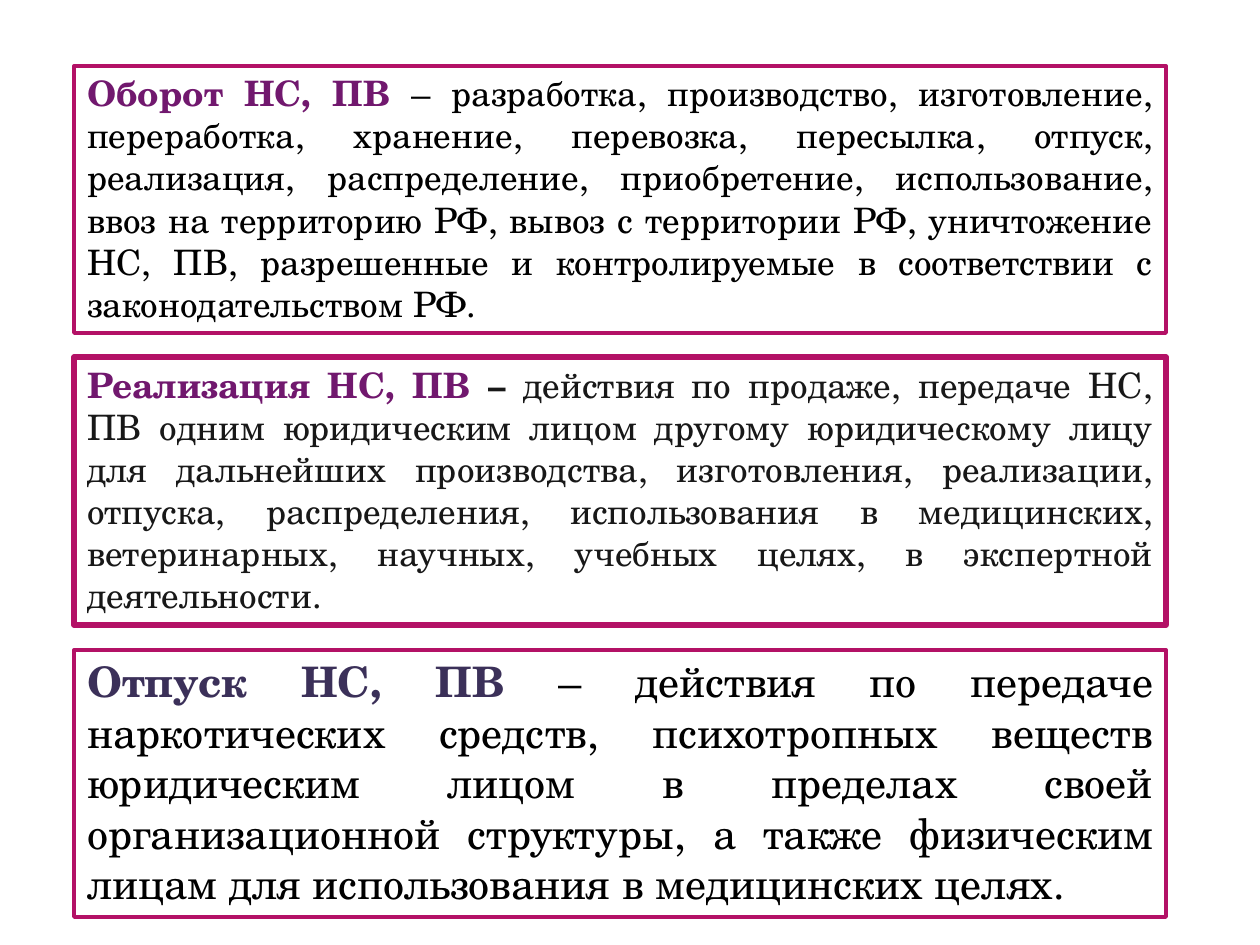
import pptx
import pptx.util
import pptx.dml.color
import pptx.enum.shapes
import pptx.enum.text

EMU_PER_PX = 914400 / 126
FONT = "TeX Gyre Schola"
COLORS = {
    "border": "B31166",
    "purple": "71186E",
    "indigo": "3B3059",
    "charcoal": "181818",
    "black": "000000",
}


def px(length):
    return pptx.util.Emu(round(length * EMU_PER_PX))


def color(name):
    return pptx.dml.color.RGBColor.from_string(COLORS[name])


def add_text(paragraph, text, size=20, fill="black", bold=False):
    run = paragraph.add_run()
    run.text = text
    run.font.name = FONT
    run.font.size = pptx.util.Pt(size)
    run.font.bold = bold
    run.font.color.rgb = color(fill)


class SlideBuilder:
    """Holds the box style and the current slide."""

    left, width = 74, 1092
    margin_x, margin_y = 13, 6

    def __init__(self, presentation):
        self.slide = presentation.slides.add_slide(presentation.slide_layouts[6])

    def definition_box(self, top, height, runs, size=20, border=2.25):
        shape = self.slide.shapes.add_shape(
            pptx.enum.shapes.MSO_SHAPE.RECTANGLE,
            px(self.left), px(top), px(self.width), px(height))
        shape.shadow.inherit = False
        shape.fill.background()
        shape.line.color.rgb = color("border")
        shape.line.width = pptx.util.Pt(border)

        frame = shape.text_frame
        frame.word_wrap = True
        frame.vertical_anchor = pptx.enum.text.MSO_ANCHOR.TOP
        frame.margin_left = frame.margin_right = px(self.margin_x)
        frame.margin_top = frame.margin_bottom = px(self.margin_y)
        paragraph = frame.paragraphs[0]
        paragraph.alignment = pptx.enum.text.PP_ALIGN.JUSTIFY
        for text, fill, bold in runs:
            add_text(paragraph, text, size=size, fill=fill, bold=bold)


def main():
    presentation = pptx.Presentation()
    presentation.slide_width, presentation.slide_height = px(1260), px(945)
    builder = SlideBuilder(presentation)

    # Circulation
    builder.definition_box(66, 267, [
        ("Оборот НС, ПВ ", "purple", True),
        ("– разработка, производство, изготовление, переработка, хранение, "
         "перевозка, пересылка, отпуск, реализация, распределение, "
         "приобретение, использование, ввоз на территорию РФ, вывоз с "
         "территории РФ, уничтожение НС, ПВ, разрешенные и контролируемые "
         "в соответствии с законодательством РФ.", "black", False),
    ])

    # Sale and transfer between legal entities
    builder.definition_box(357, 268, [
        ("Реализация НС, ПВ ", "purple", True),
        ("– ", "charcoal", True),
        ("действия по продаже, передаче НС, ПВ одним юридическим лицом "
         "другому юридическому лицу для дальнейших производства, "
         "изготовления, реализации, отпуска, распределения, использования "
         "в медицинских, ветеринарных, научных, учебных целях, в экспертной "
         "деятельности.", "charcoal", False),
    ], border=3)

    # Dispensing
    builder.definition_box(650, 267, [
        ("Отпуск НС, ПВ ", "indigo", True),
        ("– действия по передаче наркотических средств, психотропных веществ "
         "юридическим лицом в пределах своей организационной структуры, а "
         "также физическим лицам для использования в медицинских целях.",
         "black", False),
    ], size=24)

    presentation.save("out.pptx")


if __name__ == "__main__":
    main()
